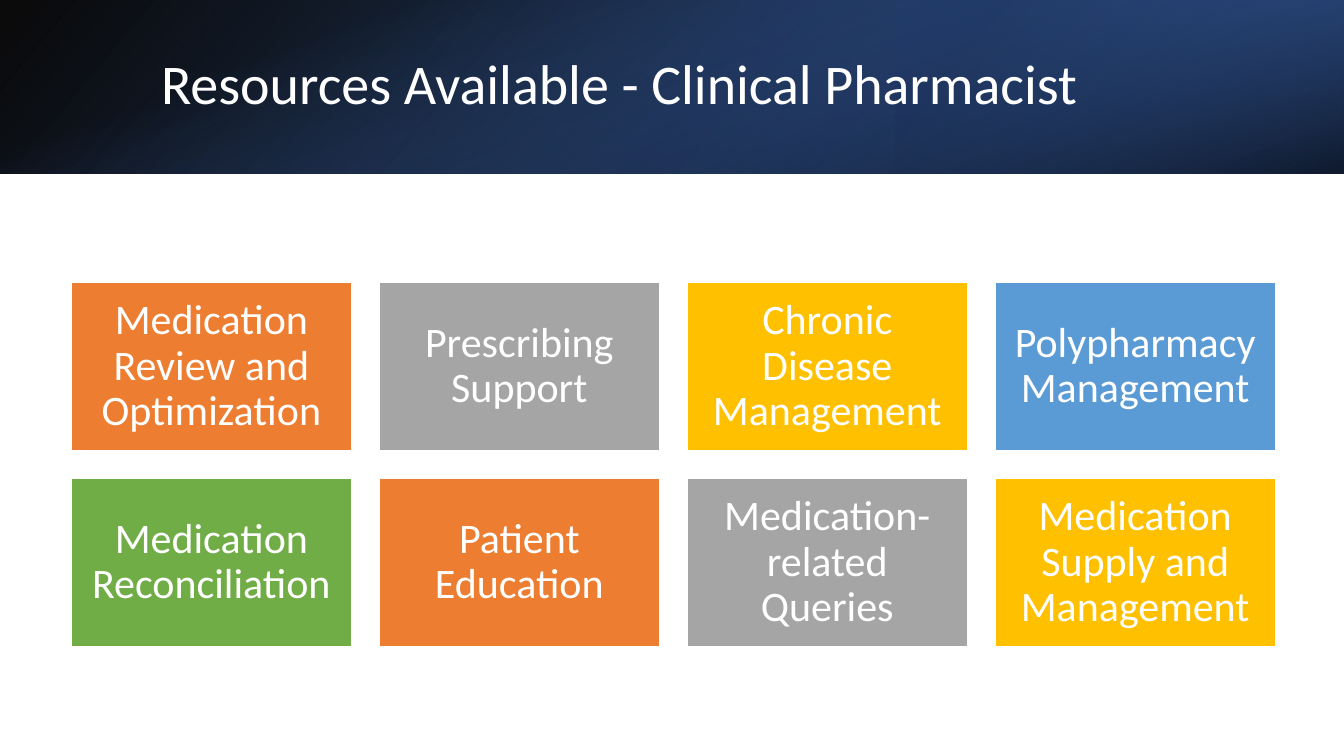
from dataclasses import dataclass
from itertools import cycle

from lxml.etree import SubElement
from pptx import Presentation
from pptx.dml.color import RGBColor
from pptx.enum.shapes import MSO_SHAPE
from pptx.enum.text import MSO_ANCHOR, PP_ALIGN
from pptx.oxml.ns import qn
from pptx.shapes.autoshape import Shape
from pptx.slide import Slide
from pptx.util import Emu, Inches, Pt

COLUMNS, ROWS = 80, 45
HEADER_ROWS = 10.33


@dataclass(frozen=True)
class Theme:
    font: str = "Calibri"
    title_size: int = 40
    card_size: int = 30
    white: str = "FFFFFF"
    black: str = "000000"
    deep_blue: str = "2F5597"
    navy: str = "203864"
    blue: str = "4472C4"
    cards: tuple[str, ...] = ("ED7D31", "A5A5A5", "FFC000", "5B9BD5", "70AD47")


@dataclass(frozen=True)
class Area:
    column: float
    row: float
    columns: float
    rows: float


@dataclass(frozen=True)
class Stop:
    position: int
    color: str
    opacity: int = 100


@dataclass(frozen=True)
class Band:
    area: Area
    angle: int
    stops: tuple[Stop, ...]
    rotation: int = 0
    flipped: bool = False


@dataclass(frozen=True)
class CardGrid:
    first: Area = Area(4.25, 16.82, 16.67, 10)
    gap: float = 1.66
    across: int = 4

    def cell(self, index: int) -> Area:
        row, column = divmod(index, self.across)
        first = self.first
        return Area(
            first.column + column * (first.columns + self.gap),
            first.row + row * (first.rows + self.gap),
            first.columns,
            first.rows,
        )


THEME = Theme()
WIDTH, HEIGHT = Inches(13.33), Inches(7.5)
BANDS = (
    Band(
        Area(0, 0, COLUMNS, HEADER_ROWS), 140,
        (Stop(0, THEME.black, 96), Stop(100, THEME.deep_blue)),
        flipped=True,
    ),
    Band(
        Area(COLUMNS * 2 / 3, 0, COLUMNS / 3, HEADER_ROWS), 320,
        (Stop(19, THEME.navy, 68), Stop(100, THEME.blue, 79)),
        rotation=180, flipped=True,
    ),
    Band(
        Area((COLUMNS - HEADER_ROWS) / 2, (HEADER_ROWS - COLUMNS) / 2, HEADER_ROWS, COLUMNS), 340,
        (Stop(23, THEME.blue, 0), Stop(99, THEME.black, 74)),
        rotation=90,
    ),
)
TITLE_AREA = Area(9, 2.25, 65.9, 5.75)
RESOURCES = (
    "Medication Review and Optimization",
    "Prescribing Support",
    "Chronic Disease Management",
    "Polypharmacy Management",
    "Medication Reconciliation",
    "Patient Education",
    "Medication-related Queries",
    "Medication Supply and Management",
)


def place(area: Area) -> tuple[Emu, Emu, Emu, Emu]:
    return (
        Emu(int(WIDTH * area.column / COLUMNS)),
        Emu(int(HEIGHT * area.row / ROWS)),
        Emu(int(WIDTH * area.columns / COLUMNS)),
        Emu(int(HEIGHT * area.rows / ROWS)),
    )


def add_rectangle(page: Slide, area: Area) -> Shape:
    box = page.shapes.add_shape(MSO_SHAPE.RECTANGLE, *place(area))
    box.shadow.inherit = False
    return box


def write_text(
    box: Shape, text: str, *, size: int, align: PP_ALIGN,
    side_margin: float = 0.1, end_margin: float = 0.05,
) -> None:
    frame = box.text_frame
    frame.word_wrap = True
    frame.vertical_anchor = MSO_ANCHOR.MIDDLE
    frame.margin_left = frame.margin_right = Inches(side_margin)
    frame.margin_top = frame.margin_bottom = Inches(end_margin)
    para = frame.paragraphs[0]
    para.alignment = align
    para.line_spacing = 0.9
    span = para.add_run()
    span.text = text
    span.font.name = THEME.font
    span.font.size = Pt(size)
    span.font.color.rgb = RGBColor.from_string(THEME.white)


def add_band(page: Slide, band: Band) -> None:
    box = add_rectangle(page, band.area)
    box.rotation = band.rotation
    box.line.fill.background()
    box.fill.gradient()
    properties = box.element.spPr
    if band.flipped:
        properties.find(qn("a:xfrm")).set("flipH", "1")
    gradient = properties.find(qn("a:gradFill"))
    for child in list(gradient):
        gradient.remove(child)
    stops = SubElement(gradient, qn("a:gsLst"))
    for stop in band.stops:
        entry = SubElement(stops, qn("a:gs"), pos=str(stop.position * 1000))
        color = SubElement(entry, qn("a:srgbClr"), val=stop.color)
        SubElement(color, qn("a:alpha"), val=str(stop.opacity * 1000))
    SubElement(gradient, qn("a:lin"), ang=str(band.angle * 60000), scaled="0")


def add_card(page: Slide, area: Area, text: str, color: str) -> None:
    box = add_rectangle(page, area)
    box.fill.solid()
    box.fill.fore_color.rgb = RGBColor.from_string(color)
    box.line.color.rgb = RGBColor.from_string(THEME.white)
    box.line.width = Pt(1)
    write_text(
        box, text, size=THEME.card_size, align=PP_ALIGN.CENTER,
        side_margin=0.12, end_margin=0.12,
    )


def main() -> None:
    deck = Presentation()
    deck.slide_width, deck.slide_height = WIDTH, HEIGHT
    page = deck.slides.add_slide(deck.slide_layouts[6])
    for band in BANDS:
        add_band(page, band)
    title = page.shapes.add_textbox(*place(TITLE_AREA))
    write_text(
        title, "Resources Available - Clinical Pharmacist",
        size=THEME.title_size, align=PP_ALIGN.LEFT,
    )
    grid = CardGrid()
    for index, (text, color) in enumerate(zip(RESOURCES, cycle(THEME.cards))):
        add_card(page, grid.cell(index), text, color)
    deck.save("out.pptx")


if __name__ == "__main__":
    main()
